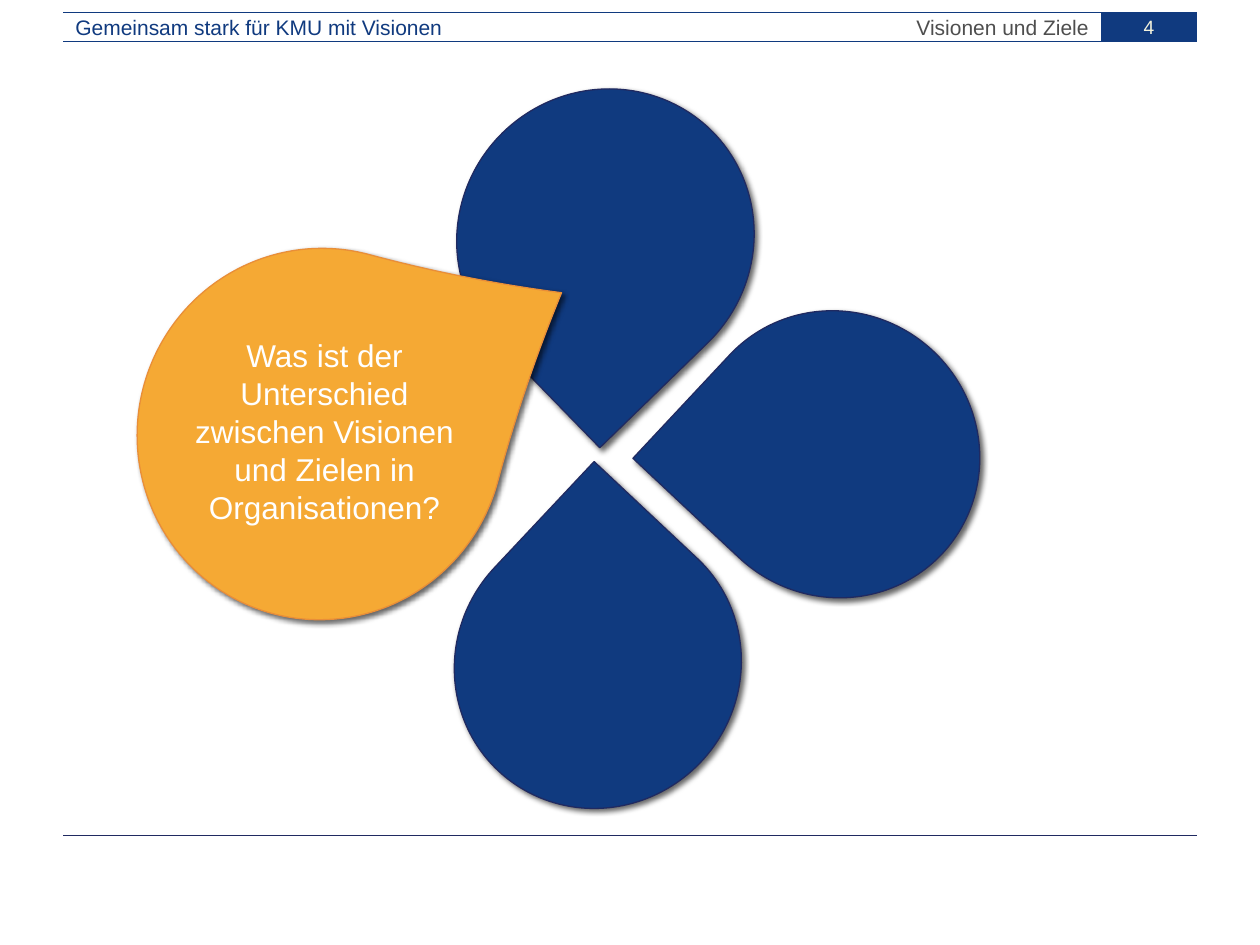
import pptx
import pptx.util
import pptx.dml.color
import pptx.enum.shapes
import pptx.enum.text
import pptx.oxml
import pptx.oxml.ns
from lxml import etree

Inches = pptx.util.Inches
Pt = pptx.util.Pt
RGBColor = pptx.dml.color.RGBColor
Shapes = pptx.enum.shapes.MSO_SHAPE
Align = pptx.enum.text.PP_ALIGN
Anchor = pptx.enum.text.MSO_ANCHOR
qn = pptx.oxml.ns.qn

BLUE = RGBColor(0x10, 0x3A, 0x7F)
NAVY = RGBColor(0x20, 0x2A, 0x61)
ORANGE = RGBColor(0xF5, 0xA9, 0x34)
DARK_ORANGE = RGBColor(0xE9, 0x8E, 0x38)
GRAY = RGBColor(0x4E, 0x4E, 0x4E)
CREAM = RGBColor(0xF3, 0xF2, 0xDC)
WHITE = RGBColor(0xFF, 0xFF, 0xFF)

# Content: boxes are (left, top, width, height) in inches
LEFT, RIGHT = 0.5, 9.5
RULES = [(0.1, BLUE), (0.33, BLUE), (6.63, NAVY)]
HEADINGS = [
    ("Gemeinsam stark für KMU mit Visionen", (0.5, 0.05, 4.3, 0.33), Align.LEFT, BLUE),
    ("Visionen und Ziele", (4.8, 0.05, 3.94, 0.33), Align.RIGHT, GRAY),
]
PAGE_NUMBER = ("4", (8.74, 0.1, 0.76, 0.23))
PETALS = [  # box, rotation, tip length, fill, outline
    ((3.61, 0.72, 2.39, 2.33), 135.8, 1, BLUE, NAVY),
    ((5.48, 2.48, 2.31, 2.25), 223.1, 1, BLUE, NAVY),
    ((3.59, 4.15, 2.31, 2.25), 313.2, 1, BLUE, NAVY),
    ((1.09, 1.97, 2.91, 2.95), 15, 1.07, ORANGE, DARK_ORANGE),
]
QUESTION = ("Was ist der Unterschied zwischen Visionen und Zielen in Organisationen?",
            (1.45, 2.62, 2.25, 1.62))


def inches(box):
    return [Inches(value) for value in box]


def write(shape, text, size, color, align, anchor):
    frame = shape.text_frame
    frame.word_wrap = True
    frame.vertical_anchor = anchor
    frame.text = text
    paragraph = frame.paragraphs[0]
    paragraph.alignment = align
    font = paragraph.runs[0].font
    font.name, font.size = "Arial", Pt(size)
    font.color.rgb = color


def add_text(page, text, box, size, color, align, anchor):
    write(page.shapes.add_textbox(*inches(box)), text, size, color, align, anchor)


def add_rule(page, top, color):
    rule = page.shapes.add_connector(pptx.enum.shapes.MSO_CONNECTOR.STRAIGHT,
                                     *inches((LEFT, top, RIGHT, top)))
    rule.line.color.rgb = color
    rule.line.width = Pt(0.5)
    etree.SubElement(rule._element.spPr, qn("a:effectLst"))


def add_shadow(shape):
    shape.shadow.inherit = False
    effects = shape._element.spPr.find(qn("a:effectLst"))
    shadow = etree.SubElement(effects, qn("a:outerShdw"), blurRad=str(Pt(3)),
                              dist=str(Pt(2)), dir=str(45 * 60000), rotWithShape="0")
    color = etree.SubElement(shadow, qn("a:srgbClr"), val="000000")
    etree.SubElement(color, qn("a:alpha"), val="60000")


def add_petal(page, box, rotation, tip, fill, outline):
    petal = page.shapes.add_shape(Shapes.TEAR, *inches(box))
    petal.rotation = rotation
    petal.adjustments[0] = tip
    petal.fill.solid()
    petal.fill.fore_color.rgb = fill
    petal.line.color.rgb = outline
    petal.line.width = Pt(0.75)
    add_shadow(petal)


def main():
    deck = pptx.Presentation()
    deck.slide_width, deck.slide_height = Inches(10), Inches(7.5)
    page = deck.slides.add_slide(deck.slide_layouts[6])

    # Header and footer rules
    for top, color in RULES:
        add_rule(page, top, color)

    # Header texts and page number
    for text, box, align, color in HEADINGS:
        add_text(page, text, box, 12, color, align, Anchor.MIDDLE)
    number, box = PAGE_NUMBER
    badge = page.shapes.add_shape(Shapes.RECTANGLE, *inches(box))
    badge.shadow.inherit = False
    badge.fill.solid()
    badge.fill.fore_color.rgb = BLUE
    badge.line.fill.background()
    write(badge, number, 11, CREAM, Align.CENTER, Anchor.MIDDLE)

    # Flower of petals with the question on the orange one
    for petal in PETALS:
        add_petal(page, *petal)
    add_text(page, *QUESTION, 18, WHITE, Align.CENTER, Anchor.TOP)

    deck.save("out.pptx")


if __name__ == "__main__":
    main()
